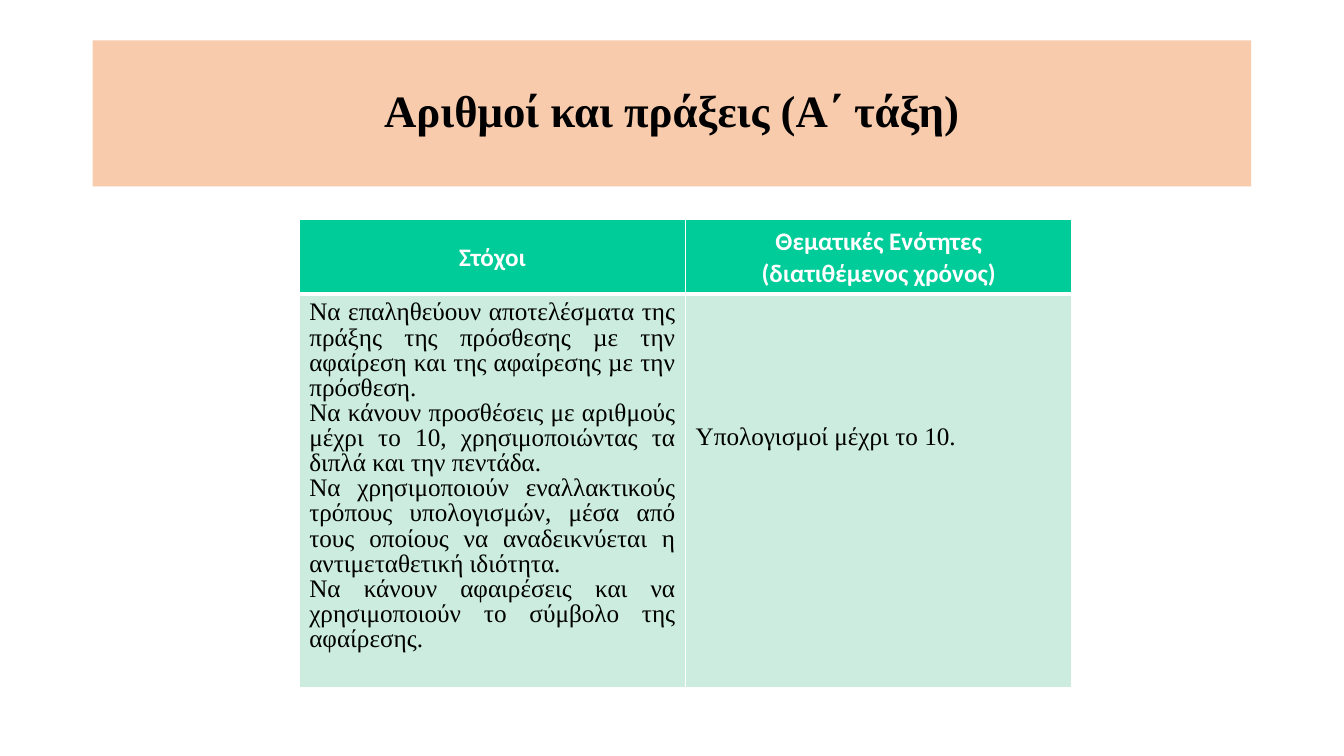
from lxml.etree import SubElement
from pptx import Presentation
from pptx.dml.color import RGBColor
from pptx.enum.shapes import MSO_SHAPE as Shape
from pptx.enum.text import MSO_ANCHOR as Anchor, PP_ALIGN as Align
from pptx.oxml.ns import qn
from pptx.util import Inches, Pt

COLORS = {
    "banner": "F8CBAD",
    "header": "00CC99",
    "body": "CBECDE",
    "border": "FFFFFF",
    "light": "FFFFFF",
    "dark": "000000",
}
SERIF, SANS = "Times New Roman", "Calibri"
TITLE = "Αριθμοί και πράξεις (Α΄ τάξη)"
HEADERS = ["Στόχοι", "Θεματικές Ενότητες\n(διατιθέμενος χρόνος)"]
GOALS = "\n".join([
    "Να επαληθεύουν αποτελέσματα της πράξης της πρόσθεσης µε την αφαίρεση "
    "και της αφαίρεσης µε την πρόσθεση.",
    "Να κάνουν προσθέσεις με αριθμούς μέχρι το 10, χρησιμοποιώντας τα διπλά "
    "και την πεντάδα.",
    "Να χρησιμοποιούν εναλλακτικούς τρόπους υπολογισμών, μέσα από τους "
    "οποίους να αναδεικνύεται η αντιμεταθετική ιδιότητα.",
    "Να κάνουν αφαιρέσεις και να χρησιμοποιούν το σύμβολο της αφαίρεσης.",
])
UNIT = "Υπολογισμοί μέχρι το 10."
HEADER_HEIGHT = 0.71
THIN, THICK = 0.91, 2.95


def color(name):
    return RGBColor.from_string(COLORS[name])


def write(frame, text, size, font, ink, bold, align, spacing):
    frame.text = text
    for paragraph in frame.paragraphs:
        paragraph.alignment = align
        paragraph.line_spacing = spacing
        for run in paragraph.runs:
            run.font.size = Pt(size)
            run.font.name = font
            run.font.bold = bold
            run.font.color.rgb = color(ink)


def add_borders(cell, top, bottom):
    properties = cell._tc.get_or_add_tcPr()
    widths = {"lnL": THIN, "lnR": THIN, "lnT": top, "lnB": bottom}
    for side, width in widths.items():
        line = SubElement(properties, qn(f"a:{side}"), w=str(Pt(width)))
        fill = SubElement(line, qn("a:solidFill"))
        SubElement(fill, qn("a:srgbClr"), val=COLORS["border"])


def style_cell(cell, fill, top, bottom, margin_top=0.05):
    add_borders(cell, top, bottom)
    cell.fill.solid()
    cell.fill.fore_color.rgb = color(fill)
    cell.margin_left = cell.margin_right = Inches(0.1)
    cell.margin_top = Inches(margin_top)
    cell.margin_bottom = Inches(0.05)


def add_banner(slide, left, top, width, height):
    banner = slide.shapes.add_shape(
        Shape.RECTANGLE, Inches(left), Inches(top), Inches(width), Inches(height))
    banner.shadow.inherit = False
    banner.fill.solid()
    banner.fill.fore_color.rgb = color("banner")
    banner.line.fill.background()
    banner.text_frame.vertical_anchor = Anchor.MIDDLE
    write(banner.text_frame, TITLE, 32, SERIF, "dark", True, Align.CENTER, 0.9)


def add_goals_table(slide, left, top, width, height):
    goals = slide.shapes.add_table(
        2, 2, Inches(left), Inches(top), Inches(width), Inches(height)).table
    goals.horz_banding = False
    goals.rows[0].height = Inches(HEADER_HEIGHT)
    goals.rows[1].height = Inches(height - HEADER_HEIGHT)

    for column, heading in enumerate(HEADERS):
        cell = goals.cell(0, column)
        style_cell(cell, "header", THIN, THICK)
        cell.vertical_anchor = Anchor.MIDDLE
        write(cell.text_frame, heading, 18, SANS, "light", True, Align.CENTER, 1.04)

    for column, (text, margin_top) in enumerate([(GOALS, 0.07), (UNIT, 1.31)]):
        cell = goals.cell(1, column)
        style_cell(cell, "body", THICK, THIN, margin_top)
        write(cell.text_frame, text, 18, SERIF, "dark", False, Align.JUSTIFY, 0.9)


def main():
    deck = Presentation()
    deck.slide_width, deck.slide_height = Inches(13.34), Inches(7.5)
    slide = deck.slides.add_slide(deck.slide_layouts[6])
    add_banner(slide, 0.92, 0.4, 11.5, 1.45)
    add_goals_table(slide, 2.97, 2.18, 7.67, 4.62)
    deck.save("out.pptx")


if __name__ == "__main__":
    main()
